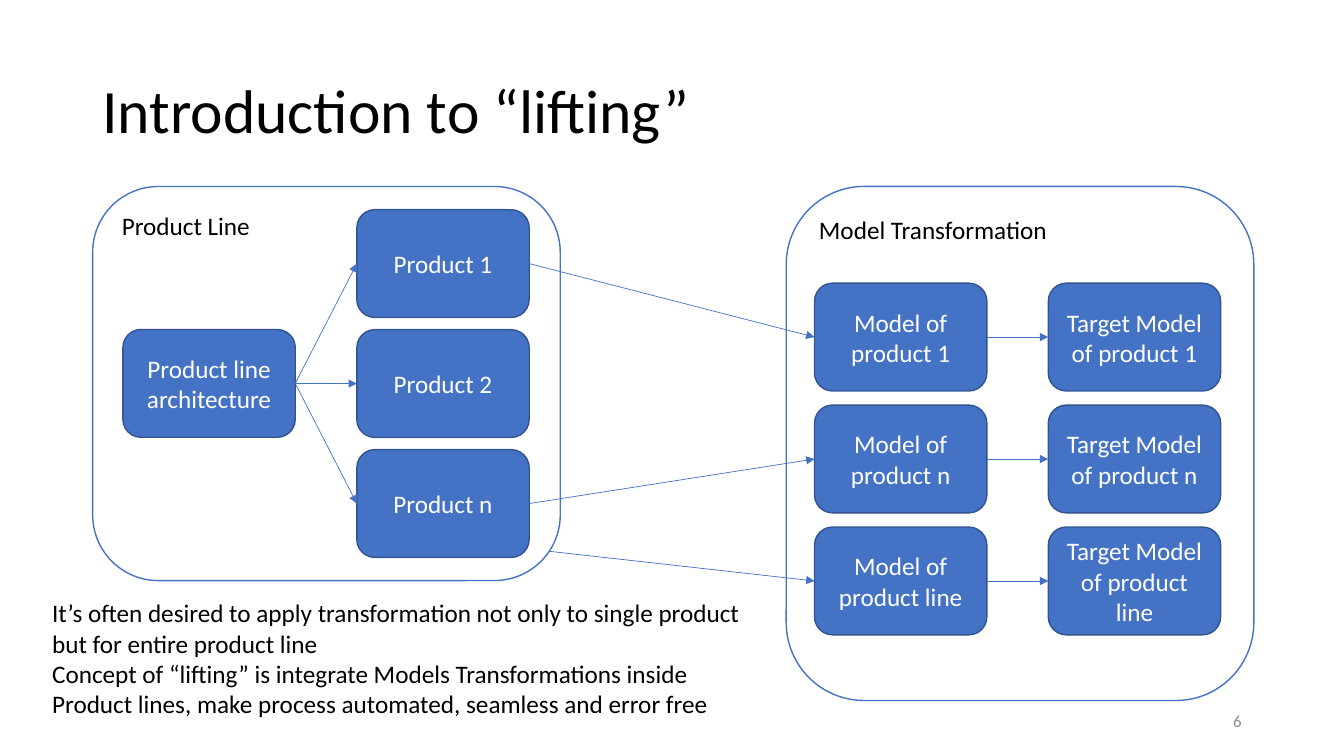
from lxml import etree
from pptx import Presentation
from pptx import util as u
from pptx.dml.color import RGBColor
from pptx.enum import shapes, text
from pptx.oxml import ns

COLORS = {
    "white": "FFFFFF",
    "black": "000000",
    "blue": "4472C4",
    "edge": "325491",
    "grey": "8C8C8C",
}
BOX_WIDTH, BOX_HEIGHT = 123.1, 77
LEFT_SITE, RIGHT_SITE = 1, 3


def color(name):
    return RGBColor.from_string(COLORS[name])


def write(frame, *paragraphs, size=18, ink="black", font="Calibri",
          align=text.PP_ALIGN.LEFT, anchor=text.MSO_ANCHOR.TOP, spacing=None):
    frame.word_wrap = True
    frame.vertical_anchor = anchor
    for index, words in enumerate(paragraphs):
        paragraph = frame.add_paragraph() if index else frame.paragraphs[0]
        paragraph.alignment = align
        paragraph.line_spacing = spacing
        run = paragraph.add_run()
        run.text = words
        run.font.name = font
        run.font.size = u.Pt(size)
        run.font.color.rgb = color(ink)


class Diagram:
    def __init__(self, slide):
        self.slide = slide

    def title(self, words, left, top, width, height):
        heading = self.slide.shapes.title
        heading.left, heading.top = u.Pt(left), u.Pt(top)
        heading.width, heading.height = u.Pt(width), u.Pt(height)
        write(heading.text_frame, words, size=44, spacing=0.9,
              anchor=text.MSO_ANCHOR.MIDDLE)

    def label(self, *paragraphs, left, top, width, height, **style):
        label = self.slide.shapes.add_textbox(
            u.Pt(left), u.Pt(top), u.Pt(width), u.Pt(height))
        write(label.text_frame, *paragraphs, **style)

    def rounded(self, words, left, top, width, height, fill, edge, **style):
        rounded = self.slide.shapes.add_shape(
            shapes.MSO_SHAPE.ROUNDED_RECTANGLE,
            u.Pt(left), u.Pt(top), u.Pt(width), u.Pt(height))
        rounded.shadow.inherit = False
        rounded.fill.solid()
        rounded.fill.fore_color.rgb = color(fill)
        rounded.line.color.rgb = color(edge)
        rounded.line.width = u.Pt(1)
        write(rounded.text_frame, words, **style)
        return rounded

    def panel(self, words, left, height):
        return self.rounded(words, left, 133.2, 334, height, "white", "blue")

    def box(self, words, left, top):
        return self.rounded(words, left, top, BOX_WIDTH, BOX_HEIGHT,
                            "blue", "edge", ink="white",
                            align=text.PP_ALIGN.CENTER,
                            anchor=text.MSO_ANCHOR.MIDDLE)

    def column(self, names, left, top, step):
        return [self.box(name, left, top + row * step)
                for row, name in enumerate(names)]

    def arrow(self, target, source=None, start=(0, 0)):
        arrow = self.slide.shapes.add_connector(
            shapes.MSO_CONNECTOR.STRAIGHT,
            u.Pt(start[0]), u.Pt(start[1]), target.left, target.top)
        if source is not None:
            arrow.begin_connect(source, RIGHT_SITE)
        arrow.end_connect(target, LEFT_SITE)
        arrow.line.color.rgb = color("blue")
        arrow.line.width = u.Pt(0.5)
        etree.SubElement(arrow.line._get_or_add_ln(), ns.qn("a:tailEnd"),
                         type="triangle")
        etree.SubElement(arrow._element.spPr, ns.qn("a:effectLst"))


def main():
    deck = Presentation()
    deck.slide_width, deck.slide_height = u.Pt(960), u.Pt(540)
    diagram = Diagram(deck.slides.add_slide(deck.slide_layouts[5]))

    diagram.title("Introduction to “lifting”", 66, 28.8, 828, 104.4)
    diagram.label("6", left=678, top=500.5, width=216, height=28.8, size=12,
                  ink="grey", align=text.PP_ALIGN.RIGHT,
                  anchor=text.MSO_ANCHOR.MIDDLE)

    diagram.panel("Product Line", 66.2, 281.5)
    diagram.panel("Model Transformation", 561.6, 367.2)

    architecture = diagram.box("Product line architecture", 87.8, 235.4)
    products = diagram.column(
        [f"Product {name}" for name in ("1", "2", "n")], 254.9, 149.8, 85.7)
    subjects = ("product 1", "product n", "product line")
    models = diagram.column(
        [f"Model of {subject}" for subject in subjects], 581.8, 202.3, 87.1)
    targets = diagram.column(
        [f"Target Model of {subject}" for subject in subjects],
        748.8, 202.3, 87.1)

    for product in products:
        diagram.arrow(product, architecture)
    for model, target in zip(models, targets):
        diagram.arrow(target, model)
    diagram.arrow(models[0], products[0])
    diagram.arrow(models[1], products[2])
    diagram.arrow(models[2], start=(392.4, 393.8))

    diagram.label(
        "It’s often desired to apply transformation not only to single "
        "product but for entire product line",
        "Concept of “lifting” is integrate Models Transformations inside "
        "Product lines, make process automated, seamless and error free",
        left=30.2, top=423.4, width=513.4, height=94.3)

    deck.save("out.pptx")


if __name__ == "__main__":
    main()
